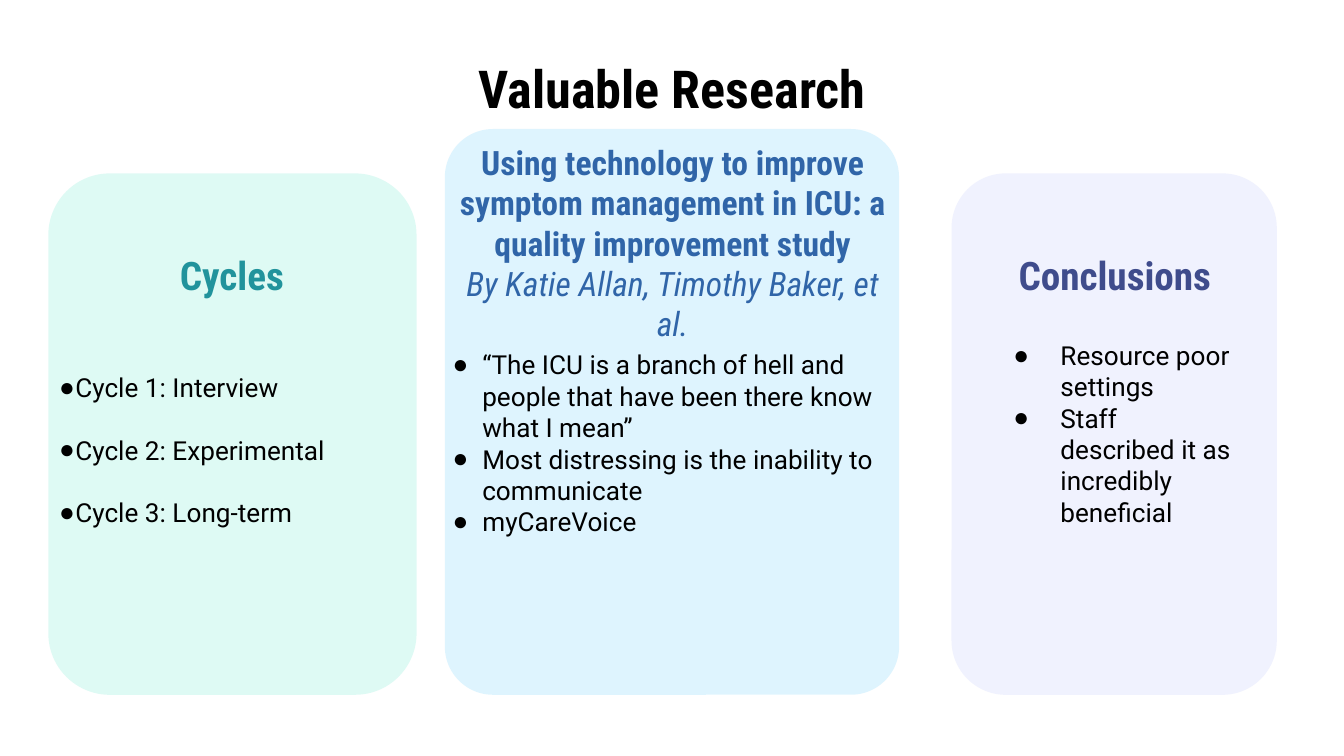
from lxml import etree
from pptx import Presentation
from pptx.dml.color import RGBColor
from pptx.enum.shapes import MSO_SHAPE
from pptx.enum.text import MSO_ANCHOR, MSO_AUTO_SIZE, PP_ALIGN
from pptx.oxml.ns import qn
from pptx.util import Inches, Pt

ROUND = MSO_SHAPE.ROUNDED_RECTANGLE
TOP, MIDDLE = MSO_ANCHOR.TOP, MSO_ANCHOR.MIDDLE
LEFT, CENTER = PP_ALIGN.LEFT, PP_ALIGN.CENTER
FIXED = MSO_AUTO_SIZE.NONE

COLORS = {
    "black": "000000", "white": "FFFFFF",
    "mint": "02DAAB", "sky": "01ADFA", "lilac": "8C9EFD",
    "teal": "21939C", "blue": "3065A8", "navy": "3F4C8C",
}


class Deck:
    head_font = "Roboto Condensed"
    body_font = "Roboto"
    dot_font = "Arial"
    list_size = 14

    def __init__(self, width, height, layout):
        self.prs = Presentation()
        self.prs.slide_width = Inches(width)
        self.prs.slide_height = Inches(height)
        self.slide = self.prs.slides.add_slide(self.prs.slide_layouts[layout])
        fill = self.slide.background.fill
        fill.solid()
        fill.fore_color.rgb = self.color("white")

    def color(self, name):
        return RGBColor.from_string(COLORS[name])

    def panel(self, at, color, curve):
        card = self.slide.shapes.add_shape(ROUND, *map(Inches, at))
        card.adjustments[0] = curve
        card.shadow.inherit = False
        card.line.fill.background()
        card.fill.solid()
        card.fill.fore_color.rgb = self.color(color)
        tint = card.element.spPr.find(".//" + qn("a:srgbClr"))
        etree.SubElement(tint, qn("a:alpha"), val="13000")

    def holder(self, index):
        box = self.slide.placeholders[index]
        box.element.getparent().append(box.element)
        return box

    def box(self):
        return self.slide.shapes.add_textbox(0, 0, 0, 0)

    def place(self, box, at, anchor, top=0.1):
        box.left, box.top, box.width, box.height = map(Inches, at)
        frame = box.text_frame
        frame.word_wrap = True
        frame.auto_size = FIXED
        frame.vertical_anchor = anchor
        frame.margin_left = frame.margin_right = frame.margin_bottom = Inches(0.1)
        frame.margin_top = Inches(top)
        return frame

    def line(self, frame, index, text, font, size, color, align, bold=False, italic=False):
        para = frame.paragraphs[0] if index == 0 else frame.add_paragraph()
        para.alignment = align
        para.space_before = Pt(0)
        run = para.add_run()
        run.text = text
        run.font.name = font
        run.font.size = Pt(size)
        run.font.bold = bold
        run.font.italic = italic
        run.font.color.rgb = self.color(color)
        return para

    def head(self, box, at, text, size, color, anchor=TOP, top=0.1, byline=None):
        frame = self.place(box, at, anchor, top)
        self.line(frame, 0, text, self.head_font, size, color, CENTER, bold=True)
        if byline:
            self.line(frame, 1, byline, self.head_font, size, color, CENTER, italic=True)

    def bullets(self, box, at, items, margin, indent, top=0.1, spacing=1.0):
        frame = self.place(box, at, MIDDLE, top)
        for index, item in enumerate(items):
            para = self.line(frame, index, item, self.body_font, self.list_size, "black", LEFT)
            para.line_spacing = spacing
            props = para._p.get_or_add_pPr()
            props.set("marL", str(Inches(margin)))
            props.set("indent", str(Inches(indent)))
            tone = etree.SubElement(props, qn("a:buClr"))
            etree.SubElement(tone, qn("a:srgbClr"), val=COLORS["black"])
            etree.SubElement(props, qn("a:buFont"), typeface=self.dot_font)
            etree.SubElement(props, qn("a:buChar"), char="●")

    def save(self):
        self.prs.save("out.pptx")


def main():
    deck = Deck(10, 10 * 9 / 16, layout=4)

    deck.panel((7.08, 1.29, 2.42, 3.88), "lilac", 0.167)
    deck.panel((0.36, 1.29, 2.74, 3.88), "mint", 0.167)
    deck.head(deck.holder(0), (0.5, 0.45, 9, 0.41), "Valuable Research", 28, "black", MIDDLE)
    deck.panel((3.31, 0.96, 3.38, 4.21), "sky", 0.106)

    deck.head(
        deck.box(), (3.23, 1.2, 3.55, 1.31),
        "Using technology to improve symptom management in ICU: a quality improvement study",
        18, "blue", MIDDLE, top=0, byline="By Katie Allan, Timothy Baker, et al.",
    )
    deck.bullets(deck.box(), (3.24, 2.59, 3.55, 1.51), [
        "“The ICU is a branch of hell and people that have been there know what I mean”",
        "Most distressing is the inability to communicate",
        "myCareVoice",
    ], 0.25, -0.22, top=0)

    deck.bullets(deck.holder(4), (7.29, 2.32, 2.01, 1.81), [
        "Resource poor settings",
        "Staff described it as incredibly beneficial",
    ], 0.5, -0.35)
    deck.head(deck.holder(3), (7.29, 1.77, 2.01, 0.41), "Conclusions", 21, "navy")

    deck.bullets(deck.holder(2), (0.34, 2.54, 2.74, 1.38), [
        "Cycle 1: Interview",
        "Cycle 2: Experimental",
        "Cycle 3: Long-term",
    ], 0.12, -0.16, spacing=2.0)
    deck.head(deck.holder(1), (0.72, 1.77, 2.01, 0.41), "Cycles", 21, "teal")

    deck.save()


if __name__ == "__main__":
    main()
